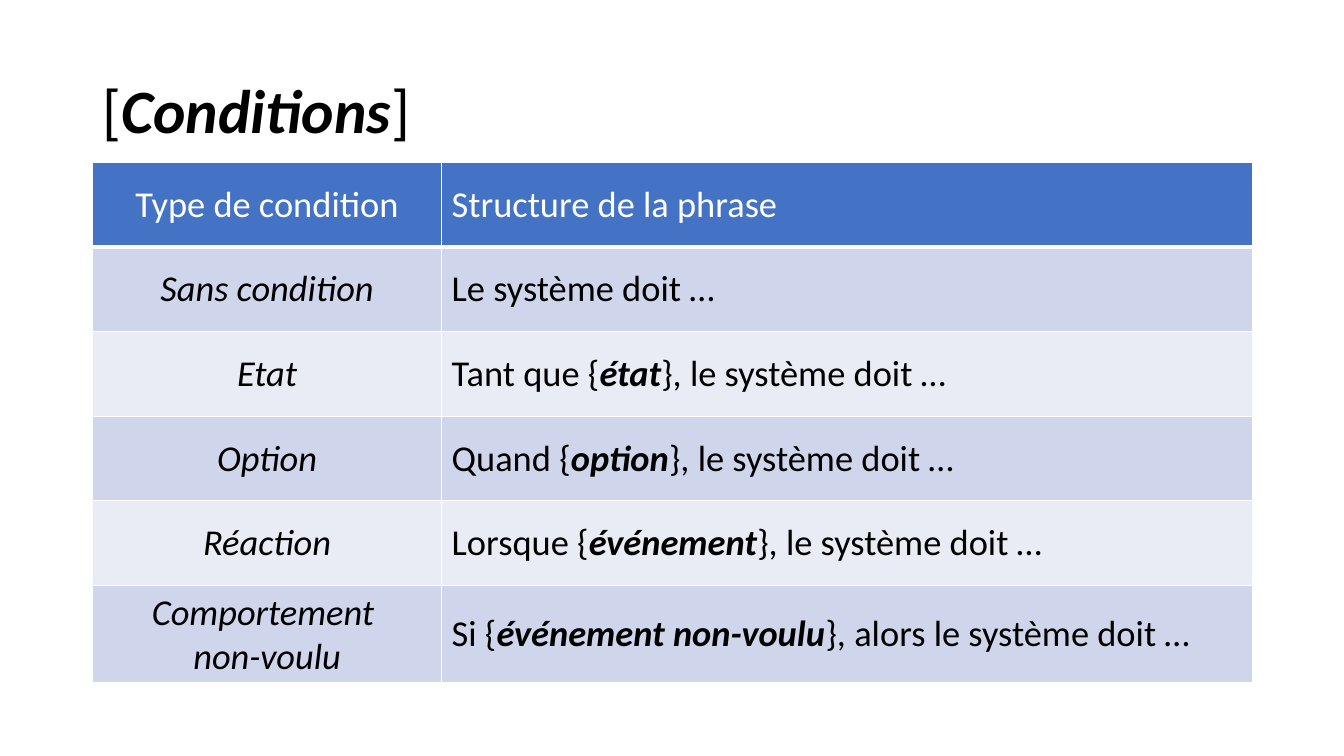
from dataclasses import dataclass

from lxml.etree import SubElement
from pptx import Presentation
from pptx.dml.color import RGBColor
from pptx.enum.text import MSO_ANCHOR as Anchor, PP_ALIGN as Align
from pptx.oxml.ns import qn
from pptx.util import Inches, Pt


@dataclass(frozen=True)
class Theme:
    font: str = "Calibri"
    text: str = "000000"
    light: str = "FFFFFF"
    header: str = "4472C4"
    bands: tuple = ("CFD5EA", "E9EBF5")
    title_size: int = 44
    table_size: int = 26
    line: int = 1
    header_line: int = 3


PLAIN = {"bold": False, "italic": False}
ITALIC = {"bold": False, "italic": True}
STRONG = {"bold": True, "italic": True}


def phrase(before, term, after):
    return [(before, PLAIN), (term, STRONG), (after, PLAIN)]


HEADINGS = ("Type de condition", "Structure de la phrase")
CONDITIONS = [
    (["Sans condition"], [("Le système doit …", PLAIN)]),
    (["Etat"], phrase("Tant que {", "état", "}, le système doit …")),
    (["Option"], phrase("Quand {", "option", "}, le système doit …")),
    (["Réaction"], phrase("Lorsque {", "événement", "}, le système doit …")),
    (["Comportement ", "non-voulu"],
     phrase("Si {", "événement non-voulu", "}, alors le système doit …")),
]


class SlideBuilder:
    def __init__(self, slide, theme):
        self.s = slide
        self.theme = theme

    def add_runs(self, p, runs, size, color):
        for text, style in runs:
            r = p.add_run()
            r.text = text
            fmt = {"name": self.theme.font, "size": Pt(size), **style}
            for name, value in fmt.items():
                setattr(r.font, name, value)
            r.font.color.rgb = RGBColor.from_string(color)

    def title(self, runs, left, top, width, height):
        tf = self.s.shapes.add_textbox(
            Inches(left), Inches(top), Inches(width), Inches(height)).text_frame
        for name, value in {"word_wrap": True, "vertical_anchor": Anchor.MIDDLE}.items():
            setattr(tf, name, value)
        p = tf.paragraphs[0]
        p.line_spacing = 0.9
        self.add_runs(p, runs, self.theme.title_size, self.theme.text)

    def borders(self, cell, bottom):
        tc_pr = cell._tc.get_or_add_tcPr()
        widths = {"lnL": self.theme.line, "lnR": self.theme.line,
                  "lnT": self.theme.line, "lnB": bottom}
        for tag, width in widths.items():
            ln = SubElement(tc_pr, qn(f"a:{tag}"), w=str(Pt(width)))
            fill = SubElement(ln, qn("a:solidFill"))
            SubElement(fill, qn("a:srgbClr"), val=self.theme.light)

    def cell(self, cell, paragraphs, align, fill, color, bottom):
        self.borders(cell, bottom)
        cell.fill.solid()
        cell.fill.fore_color.rgb = RGBColor.from_string(fill)
        cell.vertical_anchor = Anchor.MIDDLE
        tf = cell.text_frame
        for i, runs in enumerate(paragraphs):
            p = tf.add_paragraph() if i else tf.paragraphs[0]
            p.alignment = align
            self.add_runs(p, runs, self.theme.table_size, color)

    def table(self, headings, conditions, left, top, widths, heights):
        table = self.s.shapes.add_table(
            len(heights), len(widths), Inches(left), Inches(top),
            Inches(sum(widths)), Inches(sum(heights))).table
        for name in ("first_row", "horz_banding"):
            setattr(table, name, False)
        for column, width in zip(table.columns, widths):
            column.width = Inches(width)
        for row, height in zip(table.rows, heights):
            row.height = Inches(height)

        th = self.theme
        aligns = (Align.CENTER, Align.LEFT)
        for col, (text, align) in enumerate(zip(headings, aligns)):
            self.cell(table.cell(0, col), [[(text, PLAIN)]], align,
                      th.header, th.light, th.header_line)
        for i, (names, runs) in enumerate(conditions):
            columns = ([[(name, ITALIC)] for name in names], [runs])
            for col, (paragraphs, align) in enumerate(zip(columns, aligns)):
                self.cell(table.cell(i + 1, col), paragraphs, align,
                          th.bands[i % 2], th.text, th.line)


def main():
    prs = Presentation()
    prs.slide_width, prs.slide_height = Inches(13.33), Inches(7.5)
    s = prs.slides.add_slide(prs.slide_layouts[6])
    builder = SlideBuilder(s, Theme())
    builder.title(phrase("[", "Conditions", "]"), 0.92, 0.4, 11.5, 1.45)
    builder.table(HEADINGS, CONDITIONS, 0.92, 1.61,
                  (3.46, 8.04), [0.84] * len(CONDITIONS) + [0.96])
    prs.save("out.pptx")


if __name__ == "__main__":
    main()
